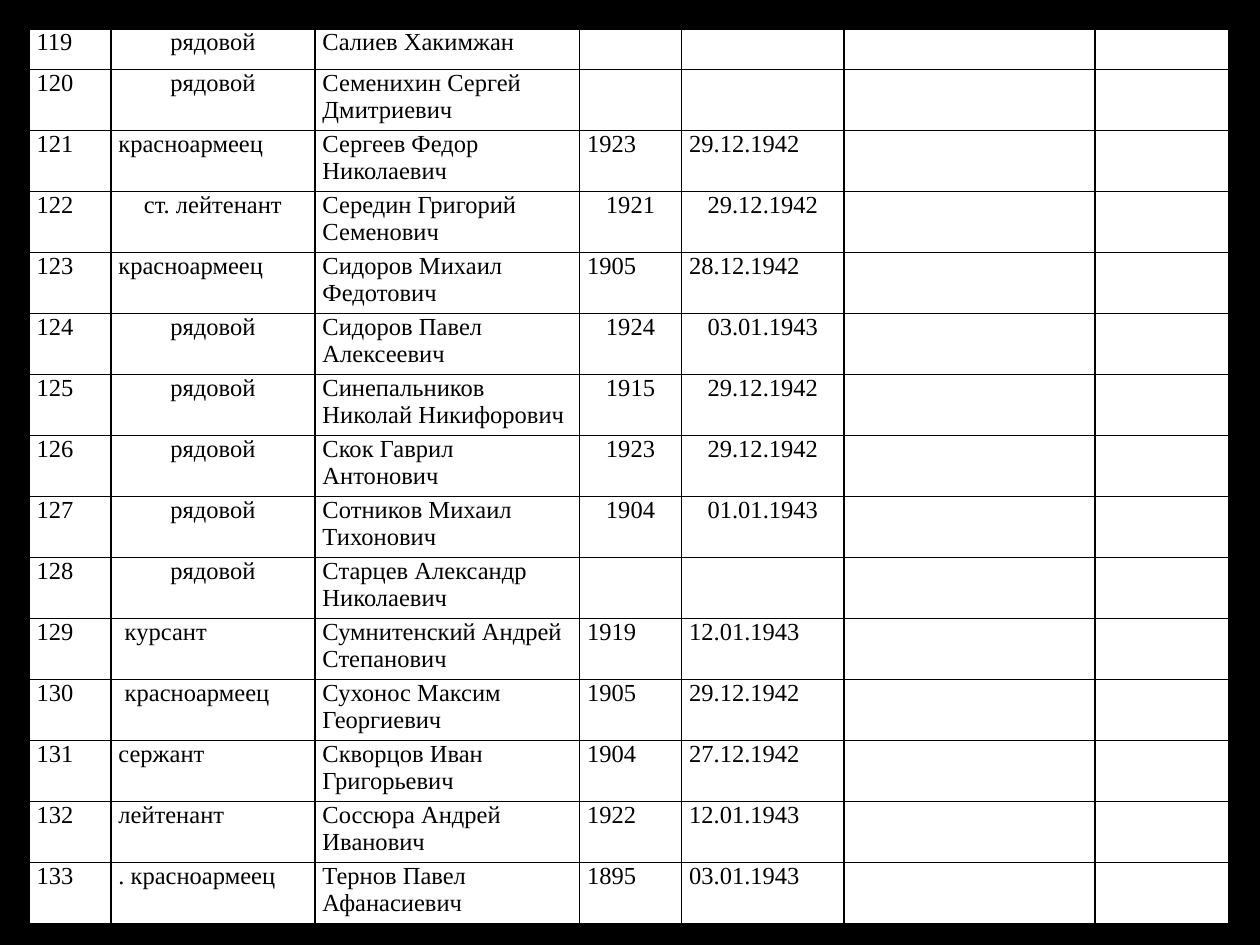
import pptx
import pptx.dml.color
import pptx.enum.text
import pptx.oxml
import pptx.oxml.ns
import pptx.util

Inches = pptx.util.Inches
ALIGN = pptx.enum.text.PP_ALIGN
WIDTHS = [0.65, 1.62, 2.1, 0.81, 1.29, 1.99, 1.06]
FIRST = 119
HEAD, HEIGHT = 0.32, 7.1
MID_RANKS = ("рядовой", "ст. лейтенант")
INSET_ROWS = (129, 130)
PEOPLE = [
    ("рядовой", "Салиев Хакимжан", "", ""),
    ("рядовой", "Семенихин Сергей Дмитриевич", "", ""),
    ("красноармеец", "Сергеев Федор Николаевич", "1923", "29.12.1942"),
    ("ст. лейтенант", "Середин Григорий Семенович", "1921", "29.12.1942"),
    ("красноармеец", "Сидоров Михаил Федотович", "1905", "28.12.1942"),
    ("рядовой", "Сидоров Павел Алексеевич", "1924", "03.01.1943"),
    ("рядовой", "Синепальников Николай Никифорович", "1915", "29.12.1942"),
    ("рядовой", "Скок Гаврил Антонович", "1923", "29.12.1942"),
    ("рядовой", "Сотников Михаил Тихонович", "1904", "01.01.1943"),
    ("рядовой", "Старцев Александр Николаевич", "", ""),
    ("курсант", "Сумнитенский Андрей Степанович", "1919", "12.01.1943"),
    ("красноармеец", "Сухонос Максим Георгиевич", "1905", "29.12.1942"),
    ("сержант", "Скворцов Иван Григорьевич", "1904", "27.12.1942"),
    ("лейтенант", "Соссюра Андрей Иванович", "1922", "12.01.1943"),
    (". красноармеец", "Тернов Павел Афанасиевич", "1895", "03.01.1943"),
]


def color(code):
    """Turn a hex string into a colour."""
    return pptx.dml.color.RGBColor.from_string(code)


def paint(fill, code):
    """Give a fill one solid colour."""
    fill.solid()
    fill.fore_color.rgb = color(code)


def write(cell, text, size=14, font="Times New Roman", ink="000000", align=ALIGN.LEFT):
    """Put formatted text in a cell."""
    para = cell.text_frame.paragraphs[0]
    para.alignment = align
    run = para.add_run()
    run.text = text
    run.font.size = pptx.util.Pt(size)
    run.font.name = font
    run.font.color.rgb = color(ink)


def edge(cell, code="000000", width=1):
    """Draw a line on all four sides of a cell."""
    props = cell._tc.get_or_add_tcPr()
    space = pptx.oxml.ns.nsdecls("a")
    for spot, side in enumerate(("lnL", "lnR", "lnT", "lnB")):
        line = pptx.oxml.parse_xml(
            f'<a:{side} {space} w="{pptx.util.Pt(width)}"><a:solidFill>'
            f'<a:srgbClr val="{code}"/></a:solidFill></a:{side}>')
        props.insert(spot, line)


def style(cell, inset=0.06):
    """Set the margins, fill and lines of a cell."""
    cell.margin_left, cell.margin_right = Inches(inset), Inches(0.06)
    cell.margin_top = cell.margin_bottom = 0
    paint(cell.fill, "FFFFFF")
    edge(cell)


def add_list(slide):
    """Add the table of people, numbered in order."""
    frame = slide.shapes.add_table(
        len(PEOPLE), len(WIDTHS), Inches(0.23), Inches(0.23),
        Inches(sum(WIDTHS)), Inches(HEIGHT))
    table = frame.table
    table.first_row = table.horz_banding = False
    for col, width in zip(table.columns, WIDTHS):
        col.width = Inches(width)
    pitch = (HEIGHT - HEAD) / (len(PEOPLE) - 1)
    for i, person in enumerate(PEOPLE):
        number = FIRST + i
        table.rows[i].height = Inches(pitch if i else HEAD)
        texts = (str(number), *person)
        for j in range(len(WIDTHS)):
            cell = table.cell(i, j)
            style(cell, inset=0.11 if j == 1 and number in INSET_ROWS else 0.06)
            if j < len(texts) and texts[j]:
                mid = person[0] in MID_RANKS and j in (1, 3, 4)
                write(cell, texts[j], align=ALIGN.CENTER if mid else ALIGN.LEFT)


def main():
    """Build and save the slide."""
    deck = pptx.Presentation()
    deck.slide_width, deck.slide_height = Inches(10), Inches(7.5)
    slide = deck.slides.add_slide(deck.slide_layouts[6])
    paint(slide.background.fill, "000000")
    add_list(slide)
    deck.save("out.pptx")


if __name__ == "__main__":
    main()
